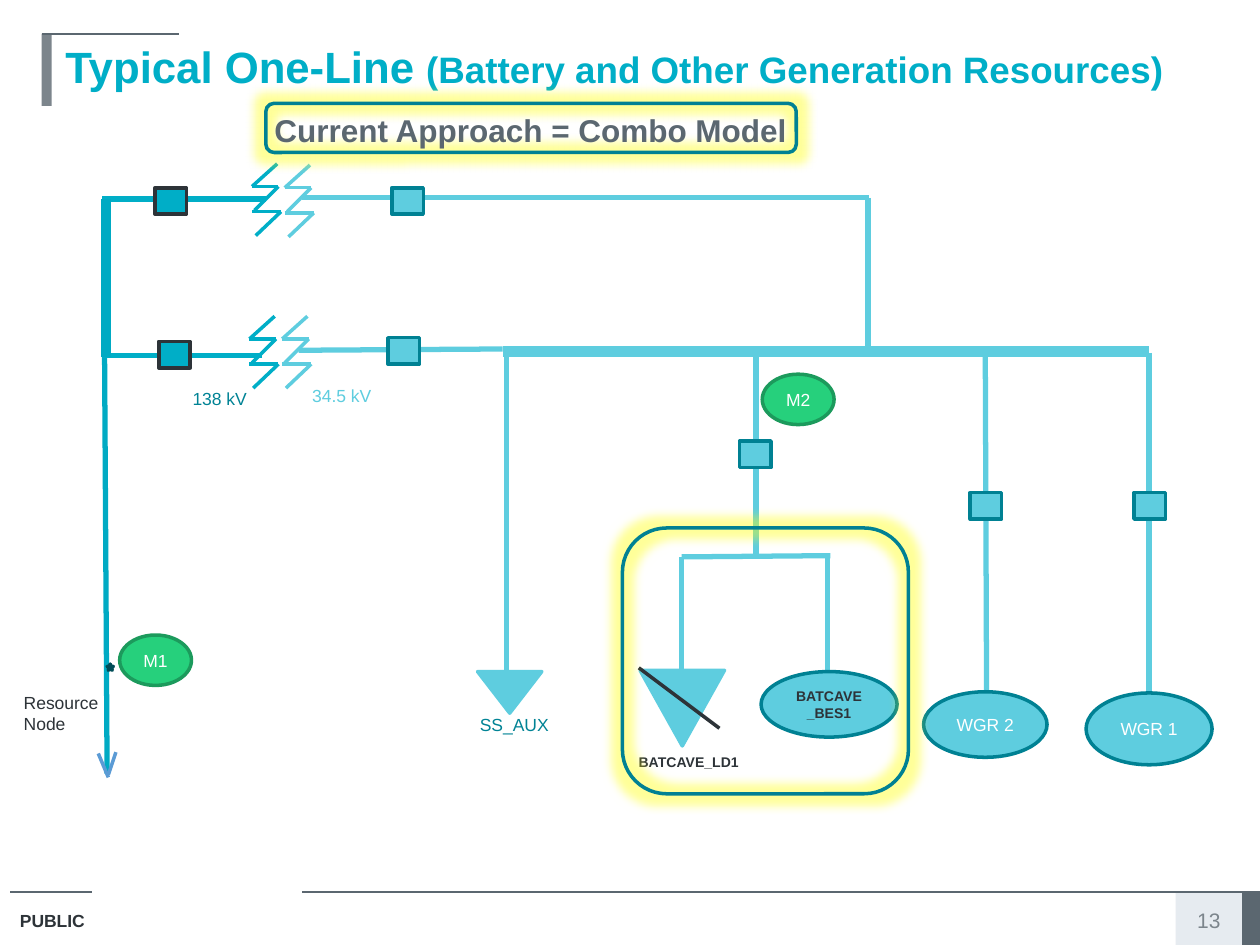
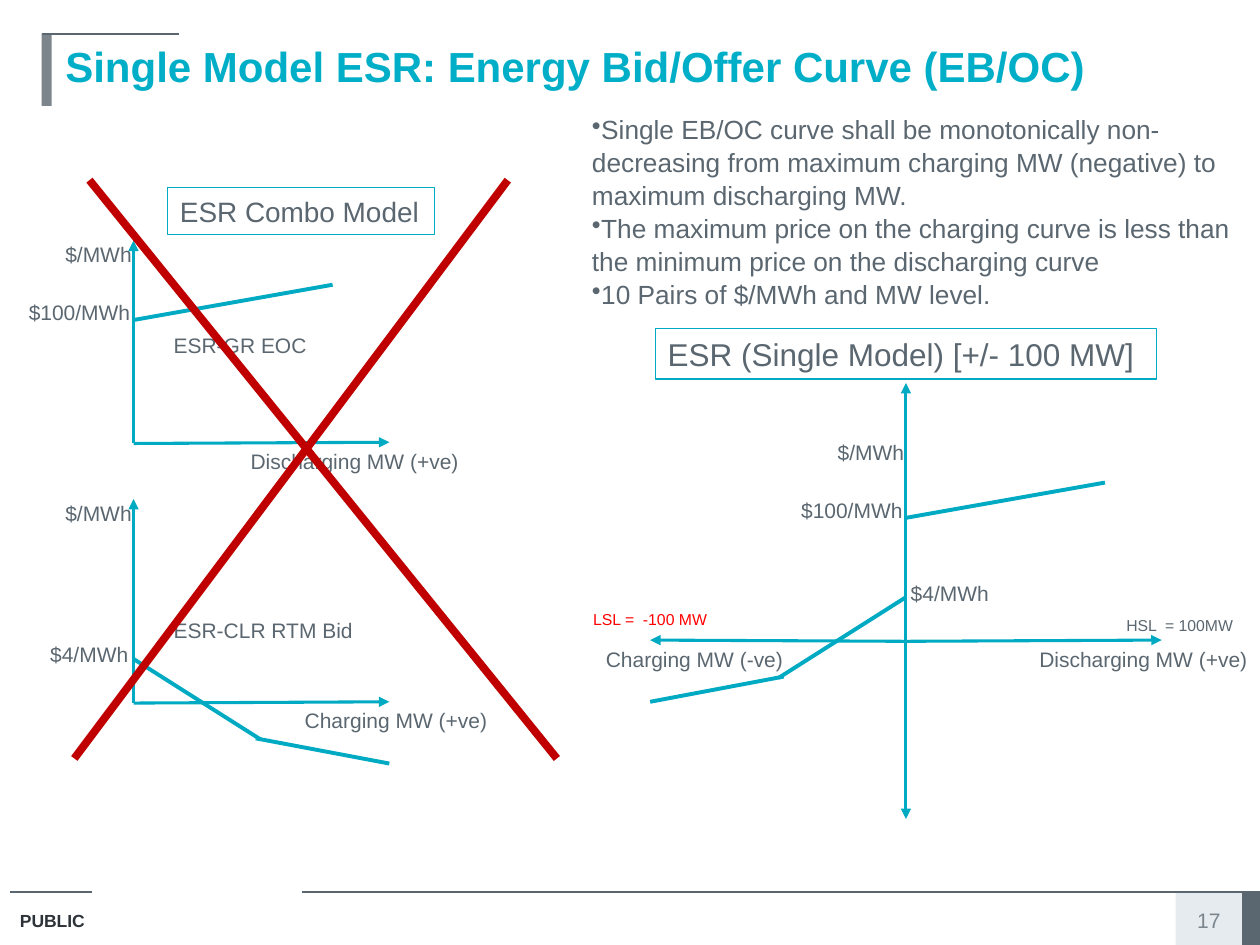
from dataclasses import dataclass
from typing import Optional

from lxml import etree
from pptx import Presentation
from pptx import util as u
from pptx.dml.color import RGBColor
from pptx.enum import shapes, text
from pptx.oxml import ns

FONT = "Arial"
TEAL = RGBColor(0x00, 0xAE, 0xC7)
AXIS_TEAL = RGBColor(0x00, 0xAA, 0xC3)
DEEP_TEAL = RGBColor(0x00, 0x81, 0x93)
KV_TEAL = RGBColor(0x00, 0x83, 0x95)
NODE_TEAL = RGBColor(0x00, 0x4C, 0x57)
LIGHT_TEAL = RGBColor(0x5E, 0xCD, 0xDF)
GREEN = RGBColor(0x26, 0xD0, 0x7C)
DEEP_GREEN = RGBColor(0x1C, 0x9A, 0x5C)
ARROW_BLUE = RGBColor(0x5B, 0x9B, 0xD5)
SLATE = RGBColor(0x5B, 0x67, 0x70)
GREY = RGBColor(0x7C, 0x85, 0x8C)
PALE = RGBColor(0xE6, 0xEB, 0xF0)
INK = RGBColor(0x2D, 0x33, 0x38)
WHITE = RGBColor(0xFF, 0xFF, 0xFF)
CROSS_RED = RGBColor(0xC0, 0x00, 0x00)
LIMIT_RED = RGBColor(0xFF, 0x00, 0x00)

RECT = shapes.MSO_SHAPE.RECTANGLE
OVAL = shapes.MSO_SHAPE.OVAL
ROUNDED = shapes.MSO_SHAPE.ROUNDED_RECTANGLE
TRIANGLE = shapes.MSO_SHAPE.ISOSCELES_TRIANGLE
STAR = shapes.MSO_SHAPE.STAR_5_POINT


@dataclass(frozen=True)
class Wire:
    x1: float
    y1: float
    x2: float
    y2: float
    color: RGBColor = LIGHT_TEAL
    width: float = 3
    ends: tuple = ()


@dataclass(frozen=True)
class Label:
    wording: str
    left: float
    top: float
    width: float
    height: float
    size: float = 12
    color: RGBColor = SLATE
    bold: bool = False
    wrap: bool = True
    centered: bool = False


@dataclass(frozen=True)
class Node:
    kind: int
    left: float
    top: float
    width: float
    height: float
    fill: Optional[RGBColor] = LIGHT_TEAL
    border: Optional[RGBColor] = DEEP_TEAL
    border_width: float = 2
    wording: str = ""
    size: float = 10
    color: RGBColor = WHITE
    bold: bool = False
    wrap: bool = True
    centered: bool = True
    rotation: float = 0
    glow: bool = False


def style_run(run, size: float, color: RGBColor, bold: bool = False) -> None:
    run.font.name = FONT
    run.font.size = u.Pt(size)
    run.font.bold = bold
    run.font.color.rgb = color


def write(frame, item) -> None:
    frame.text = item.wording
    frame.word_wrap = item.wrap
    for paragraph in frame.paragraphs:
        paragraph.alignment = text.PP_ALIGN.CENTER if item.centered else text.PP_ALIGN.LEFT
        for run in paragraph.runs:
            style_run(run, item.size, item.color, item.bold)


def draw_label(slide, label: Label) -> None:
    box = slide.shapes.add_textbox(
        *map(u.Inches, (label.left, label.top, label.width, label.height)))
    write(box.text_frame, label)
    if label.centered:
        box.text_frame.vertical_anchor = text.MSO_ANCHOR.MIDDLE


def draw_wire(slide, wire: Wire) -> None:
    line = slide.shapes.add_connector(
        shapes.MSO_CONNECTOR.STRAIGHT, *map(u.Inches, (wire.x1, wire.y1, wire.x2, wire.y2)))
    line.line.color.rgb = wire.color
    line.line.width = u.Pt(wire.width)
    for end in wire.ends:
        etree.SubElement(line.line._get_or_add_ln(), ns.qn(f"a:{end}"), type="triangle")
    etree.SubElement(line._element.spPr, ns.qn("a:effectLst"))


def add_glow(shape) -> None:
    effects = shape._element.spPr.find(ns.qn("a:effectLst"))
    glow = etree.SubElement(effects, ns.qn("a:glow"), rad=str(u.Pt(11)))
    yellow = etree.SubElement(glow, ns.qn("a:srgbClr"), val="FFFF00")
    etree.SubElement(yellow, ns.qn("a:alpha"), val="40000")


def draw_node(slide, node: Node) -> None:
    shape = slide.shapes.add_shape(
        node.kind, *map(u.Inches, (node.left, node.top, node.width, node.height)))
    shape.shadow.inherit = False
    shape.rotation = node.rotation
    if node.fill is None:
        shape.fill.background()
    else:
        shape.fill.solid()
        shape.fill.fore_color.rgb = node.fill
    if node.border is None:
        shape.line.fill.background()
    else:
        shape.line.color.rgb = node.border
        shape.line.width = u.Pt(node.border_width)
    if node.wording:
        write(shape.text_frame, node)
    if node.glow:
        add_glow(shape)


def draw_all(slide, items) -> None:
    painters = {Wire: draw_wire, Node: draw_node, Label: draw_label}
    for item in items:
        painters[type(item)](slide, item)


def start_slide(deck, number: int, title_parts):
    slide = deck.slides.add_slide(deck.slide_layouts[6])
    draw_all(slide, [
        Node(RECT, 9.33, 7.08, 0.58, 0.42, PALE, None),
        Node(RECT, 9.86, 7.08, 0.14, 0.42, SLATE, SLATE, 0.75),
        Wire(0.08, 7.08, 0.73, 7.08, SLATE, 0.75),
        Wire(2.4, 7.08, 9.9, 7.08, SLATE, 0.75),
        Label("PUBLIC", 0.06, 7.17, 1.02, 0.27, 10, INK, True),
        Node(RECT, 0.33, 0.27, 0.08, 0.57, GREY, None),
        Wire(0.33, 0.27, 1.42, 0.27, SLATE, 0.75),
        Label(str(number), 9.33, 7.18, 0.53, 0.24, 12, GREY, centered=True),
    ])
    title = slide.shapes.add_textbox(*map(u.Inches, (0.42, 0.27, 9.25, 0.57)))
    title.text_frame.word_wrap = True
    for wording, size in title_parts:
        run = title.text_frame.paragraphs[0].add_run()
        run.text = wording
        style_run(run, size, TEAL, True)
    return slide


def winding(x: float, y: float, color: RGBColor) -> list:
    strokes = [(0.02, 0.37, 0.21, 0.18), (0, 0.18, 0.2, 0), (0.03, 0.57, 0.23, 0.38),
               (0, 0.38, 0.23, 0.38), (0, 0.18, 0.21, 0.18)]
    return [Wire(x + x1, y + y1, x + x2, y + y2, color, 2) for x1, y1, x2, y2 in strokes]


def breaker(x: float, y: float, fill=LIGHT_TEAL, border=DEEP_TEAL) -> Node:
    return Node(RECT, x, y, 0.25, 0.21, fill, border)


def meter(wording: str, x: float, y: float) -> Node:
    return Node(OVAL, x, y, 0.57, 0.4, GREEN, DEEP_GREEN, wording=wording, wrap=False)


def build_one_line(deck) -> None:
    slide = start_slide(deck, 13, [("Typical One-Line ", 25),
                                   ("(Battery and Other Generation Resources)", 21)])
    point_of_interconnection = [
        Wire(0.83, 2.82, 0.85, 6.14, AXIS_TEAL),
        Wire(2.08, 2.82, 0.81, 2.82, TEAL),
        Wire(2.11, 1.58, 0.81, 1.58, TEAL),
        Wire(0.84, 1.58, 0.84, 2.83, AXIS_TEAL, 5.5),
        Wire(0.78, 5.98, 0.86, 6.17, ARROW_BLUE, 2),
        Wire(0.92, 5.97, 0.86, 6.15, ARROW_BLUE, 2),
    ]
    collector = [
        Wire(4.02, 2.79, 4.02, 5.32),
        Wire(6.59, 4.41, 5.41, 4.42),
        Wire(5.41, 4.42, 5.41, 5.31),
        Wire(7.82, 2.8, 7.83, 5.49),
        Wire(9.12, 2.8, 9.12, 5.49),
        Wire(6.57, 4.41, 6.57, 5.32),
        Wire(6, 2.8, 6, 4.41),
        Wire(9.12, 2.79, 3.99, 2.79, width=6.25),
        Wire(3.99, 2.77, 2.37, 2.78),
        Wire(6.9, 1.57, 2.4, 1.57),
        Wire(6.89, 1.57, 6.89, 2.82),
    ]
    transformers = [stroke for x, y, color in [
        (1.98, 2.51, TEAL), (2.24, 2.51, LIGHT_TEAL),
        (2, 1.3, TEAL), (2.26, 1.31, LIGHT_TEAL)] for stroke in winding(x, y, color)]
    breakers = [breaker(x, y) for x, y in [
        (5.87, 3.5), (9, 3.91), (7.7, 3.91), (3.08, 2.68), (3.11, 1.49)]]
    breakers += [breaker(x, y, TEAL, INK) for x, y in [(1.26, 2.71), (1.23, 1.49)]]
    resources = [
        Node(OVAL, 8.62, 5.5, 1, 0.57, wording="WGR 1"),
        Node(OVAL, 7.33, 5.49, 0.98, 0.52, wording="WGR 2"),
        Node(TRIANGLE, 3.79, 5.33, 0.51, 0.33, border=LIGHT_TEAL, rotation=180),
        Node(TRIANGLE, 5.08, 5.32, 0.67, 0.6, border=LIGHT_TEAL, rotation=180),
        Node(OVAL, 6.04, 5.33, 1.08, 0.52, wording="BATCAVE_BES1", size=8, color=INK, bold=True),
        meter("M1", 0.95, 5.04),
        meter("M2", 6.05, 2.97),
        Wire(5.07, 5.3, 5.71, 5.78, INK, 2),
        Node(STAR, 0.85, 5.27, 0.05, 0.05, TEAL, NODE_TEAL),
    ]
    captions = [
        Label("Resource\nNode", 0.09, 5.44, 0.83, 0.44, 10, INK),
        Label("34.5 kV", 2.38, 3.01, 0.73, 0.25, 10, LIGHT_TEAL),
        Label("138 kV", 1.43, 3.03, 0.73, 0.25, 10, KV_TEAL),
        Label("BATCAVE_LD1", 4.97, 5.93, 1.08, 0.21, 8, INK, True),
        Label("SS_AUX", 3.71, 5.62, 0.98, 0.25, 10, KV_TEAL),
    ]
    combo_model = [
        Node(ROUNDED, 4.94, 4.19, 2.27, 2.11, None, glow=True),
        Node(ROUNDED, 2.11, 0.82, 4.21, 0.39, None, glow=True),
        Label("Current Approach = Combo Model", 2.08, 0.83, 4.3, 0.4, 18, SLATE, True),
    ]
    draw_all(slide, point_of_interconnection + collector + transformers
             + breakers + resources + captions + combo_model)


def tag(wording: str, left: float, top: float, width: float) -> Label:
    return Label(wording, left, top, width, 0.3, wrap=False)


def horizontal_axis(x: float, y: float, direction: int) -> Wire:
    return Wire(x + 2.03 * direction, y, x, y + 0.01, AXIS_TEAL, 1.75, ("headEnd",))


def vertical_axis(x: float, top: float, bottom: float, *ends: str) -> Wire:
    return Wire(x, top, x, bottom, AXIS_TEAL, 1.75, ends)


def discharging(x: float, offer_y: float) -> list:
    return [
        Wire(x, offer_y, x + 1.58, offer_y - 0.28, AXIS_TEAL, 2.25),
        tag("$/MWh", x - 0.64, offer_y - 0.67, 0.73),
        tag("$100/MWh", x - 0.93, offer_y - 0.21, 1.01),
    ]


def charging(x: float, axis_y: float, direction: int) -> list:
    bid = [(0, -0.34, 1.01, 0.3), (0.97, 0.29, 2.03, 0.49)]
    return [horizontal_axis(x, axis_y, direction)] + [
        Wire(x + x1 * direction, axis_y + y1, x + x2 * direction, axis_y + y2, AXIS_TEAL, 2.25)
        for x1, y1, x2, y2 in bid]


def draw_rules(slide, rules) -> None:
    box = slide.shapes.add_textbox(*map(u.Inches, (4.6, 0.84, 5.4, 1.7)))
    frame = box.text_frame
    frame.text = "\n".join(rules)
    frame.word_wrap = True
    for paragraph in frame.paragraphs:
        paragraph.line_spacing = 1.05
        properties = paragraph._p.get_or_add_pPr()
        properties.set("marL", "0")
        properties.set("indent", "0")
        etree.SubElement(properties, ns.qn("a:buChar"), char="•")
        style_run(paragraph.runs[0], 15, SLATE)


def build_offer_curve(deck) -> None:
    slide = start_slide(deck, 17, [("Single Model ESR: Energy Bid/Offer Curve (EB/OC)", 24)])
    draw_rules(slide, [
        "Single EB/OC curve shall be monotonically non-decreasing from maximum charging MW "
        "(negative) to maximum discharging MW.",
        "The maximum price on the charging curve is less than the minimum price on the "
        "discharging curve",
        "10 Pairs of $/MWh and MW level.",
    ])
    combo_x, single_x = 1.06, 7.19
    combo = [
        vertical_axis(combo_x, 1.91, 3.52, "headEnd"),
        horizontal_axis(combo_x, 3.51, 1),
        *discharging(combo_x, 2.54),
        tag("Discharging MW (+ve)", 1.89, 3.51, 1.87),
        vertical_axis(combo_x, 3.96, 5.58, "headEnd"),
        *charging(combo_x, 5.57, 1),
        tag("$/MWh", 0.42, 3.92, 0.73),
        tag("Charging MW (+ve)", 2.32, 5.57, 1.66),
        tag("$4/MWh", 0.3, 5.04, 0.83),
        tag("ESR-GR EOC", 1.28, 2.59, 1.27),
        tag("ESR-CLR RTM Bid", 1.28, 4.85, 1.64),
        Node(RECT, 1.33, 1.49, 2.12, 0.37, None, AXIS_TEAL, 0.75, "ESR Combo Model", 16, SLATE,
             wrap=False, centered=False),
    ]
    single = [
        vertical_axis(single_x, 3.04, 6.5, "headEnd", "tailEnd"),
        horizontal_axis(single_x, 5.08, 1),
        *discharging(single_x, 4.11),
        tag("Discharging MW (+ve)", 8.15, 5.08, 1.87),
        *charging(single_x, 5.08, -1),
        tag("Charging MW (-ve)", 4.71, 5.08, 1.62),
        tag("$4/MWh", 7.13, 4.56, 0.83),
        Node(RECT, 5.2, 2.61, 3.98, 0.4, None, AXIS_TEAL, 0.75,
             "ESR (Single Model) [+/- 100 MW]", 18, SLATE, centered=False),
        Label("LSL =  -100 MW", 4.61, 4.79, 1.14, 0.25, 9, LIMIT_RED),
        Label("HSL  = 100MW", 8.84, 4.84, 1.08, 0.25, 9),
    ]
    cross = [Wire(4.03, 1.43, 0.59, 6.02, CROSS_RED, 4.5),
             Wire(0.71, 1.43, 4.42, 6.02, CROSS_RED, 4.5)]
    draw_all(slide, combo + single + cross)


def main() -> None:
    deck = Presentation()
    deck.slide_width, deck.slide_height = u.Inches(10), u.Inches(7.5)
    build_one_line(deck)
    build_offer_curve(deck)
    deck.save("out.pptx")


if __name__ == "__main__":
    main()
